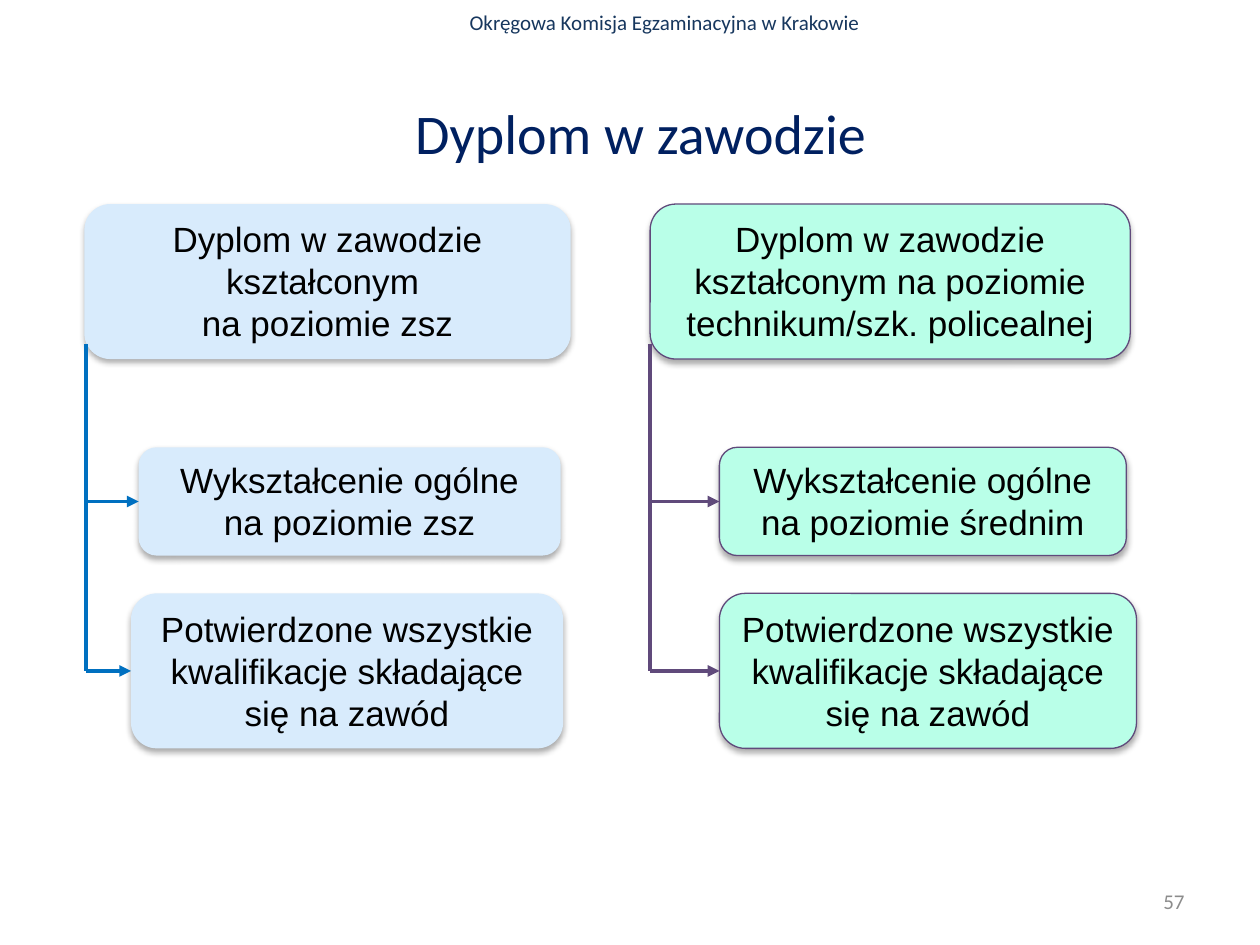
from lxml import etree
from pptx import Presentation, util as u
from pptx.dml.color import RGBColor
from pptx.enum import shapes, text
from pptx.oxml import ns

COLOURS = {
    "header": "17375E", "title": "002060", "text": "000000", "number": "8C8C8C",
    "blue fill": "D8EBFC", "blue line": "0070C0",
    "green fill": "B9FFE8", "purple line": "604A7B", "shadow": "000000",
}
# Top and height of each row of boxes
ROWS = [(1.62, 1.23), (3.55, 0.86), (4.71, 1.23)]
STEM_TOP = 2.73
QUALIFICATIONS = "Potwierdzone wszystkie kwalifikacje składające się na zawód"
# Each box: left, width, paragraphs
COLUMNS = [
    {"fill": "blue fill", "line": "blue line", "outlined": False, "stem": 0.68,
     "boxes": [
         (0.67, 3.86, ["Dyplom w zawodzie kształconym ", "na poziomie zsz"]),
         (1.1, 3.35, ["Wykształcenie ogólne na poziomie zsz"]),
         (1.04, 3.43, [QUALIFICATIONS])]},
    {"fill": "green fill", "line": "purple line", "outlined": True, "stem": 5.16,
     "boxes": [
         (5.16, 3.81, ["Dyplom w zawodzie kształconym na poziomie "
                       "technikum/szk. policealnej"]),
         (5.71, 3.23, ["Wykształcenie ogólne na poziomie średnim"]),
         (5.71, 3.31, [QUALIFICATIONS])]},
]


def rgb(name):
    return RGBColor.from_string(COLOURS[name])


def add_xml(parent, tag, **attributes):
    return etree.SubElement(parent, ns.qn(tag), attributes)


def write(shape, paragraphs, size, colour, font="Calibri",
          align=text.PP_ALIGN.CENTER, anchor=text.MSO_ANCHOR.MIDDLE):
    frame = shape.text_frame
    frame.word_wrap = True
    frame.vertical_anchor = anchor
    frame.text = "\n".join(paragraphs)
    for paragraph in frame.paragraphs:
        paragraph.alignment = align
        for key, value in {"name": font, "size": u.Pt(size)}.items():
            setattr(paragraph.font, key, value)
        paragraph.font.color.rgb = rgb(colour)


def add_label(slide, place, words, **style):
    label = slide.shapes.add_textbox(*map(u.Inches, place))
    write(label, [words], 12, **style)


def add_shadow(shape):
    """Give the shape a soft shadow straight below it."""
    shape.shadow.inherit = False
    effects = shape._element.spPr.find(ns.qn("a:effectLst"))
    shadow = add_xml(effects, "a:outerShdw", blurRad=str(u.Pt(3.5)),
                     dist=str(u.Pt(2.2)), dir="5400000", rotWithShape="0")
    colour = add_xml(shadow, "a:srgbClr", val=COLOURS["shadow"])
    add_xml(colour, "a:alpha", val="32000")


def add_box(slide, place, paragraphs, column):
    box = slide.shapes.add_shape(
        shapes.MSO_SHAPE.ROUNDED_RECTANGLE, *map(u.Inches, place))
    box.fill.solid()
    box.fill.fore_color.rgb = rgb(column["fill"])
    if column["outlined"]:
        box.line.color.rgb = rgb(column["line"])
        box.line.width = u.Pt(0.75)
    else:
        box.line.fill.background()
    add_shadow(box)
    write(box, paragraphs, 20, "text", "Arial", anchor=text.MSO_ANCHOR.TOP)
    return box


def add_line(slide, start, end, colour, target=None):
    """Draw a line; with a target box it becomes an arrow to its left side."""
    line = slide.shapes.add_connector(
        shapes.MSO_CONNECTOR.STRAIGHT, *map(u.Inches, (*start, *end)))
    line.line.color.rgb = rgb(colour)
    line.line.width = u.Pt(2.25)
    if target is not None:
        line.end_connect(target, 1)
        add_xml(line.line._get_or_add_ln(), "a:tailEnd", type="triangle")
    add_xml(line._element.spPr, "a:effectLst")


def add_column(slide, column):
    boxes = [add_box(slide, (left, top, width, height), paragraphs, column)
             for (left, width, paragraphs), (top, height)
             in zip(column["boxes"], ROWS)]
    stem, colour = column["stem"], column["line"]
    middles = [top + height / 2 for top, height in ROWS]
    add_line(slide, (stem, STEM_TOP), (stem, middles[-1]), colour)
    for box, middle, (left, *_) in list(zip(boxes, middles, column["boxes"]))[1:]:
        add_line(slide, (stem, middle), (left, middle), colour, box)


def place_title(slide, place, words):
    title = slide.shapes.title
    for key, value in zip(("left", "top", "width", "height"), place):
        setattr(title, key, u.Inches(value))
    write(title, [words], 32, "title")


def main():
    presentation = Presentation()
    presentation.slide_width, presentation.slide_height = u.Inches(10), u.Inches(7.5)
    slide = presentation.slides.add_slide(presentation.slide_layouts[5])
    add_label(slide, (1.14, 0.03, 8.27, 0.3),
              "Okręgowa Komisja Egzaminacyjna w Krakowie",
              colour="header", anchor=text.MSO_ANCHOR.TOP)
    place_title(slide, (0.67, 0.42, 8.83, 1.25), "Dyplom w zawodzie")
    for column in COLUMNS:
        add_column(slide, column)
    add_label(slide, (7.17, 6.95, 2.33, 0.4), "57",
              colour="number", align=text.PP_ALIGN.RIGHT)
    presentation.save("out.pptx")


if __name__ == "__main__":
    main()
